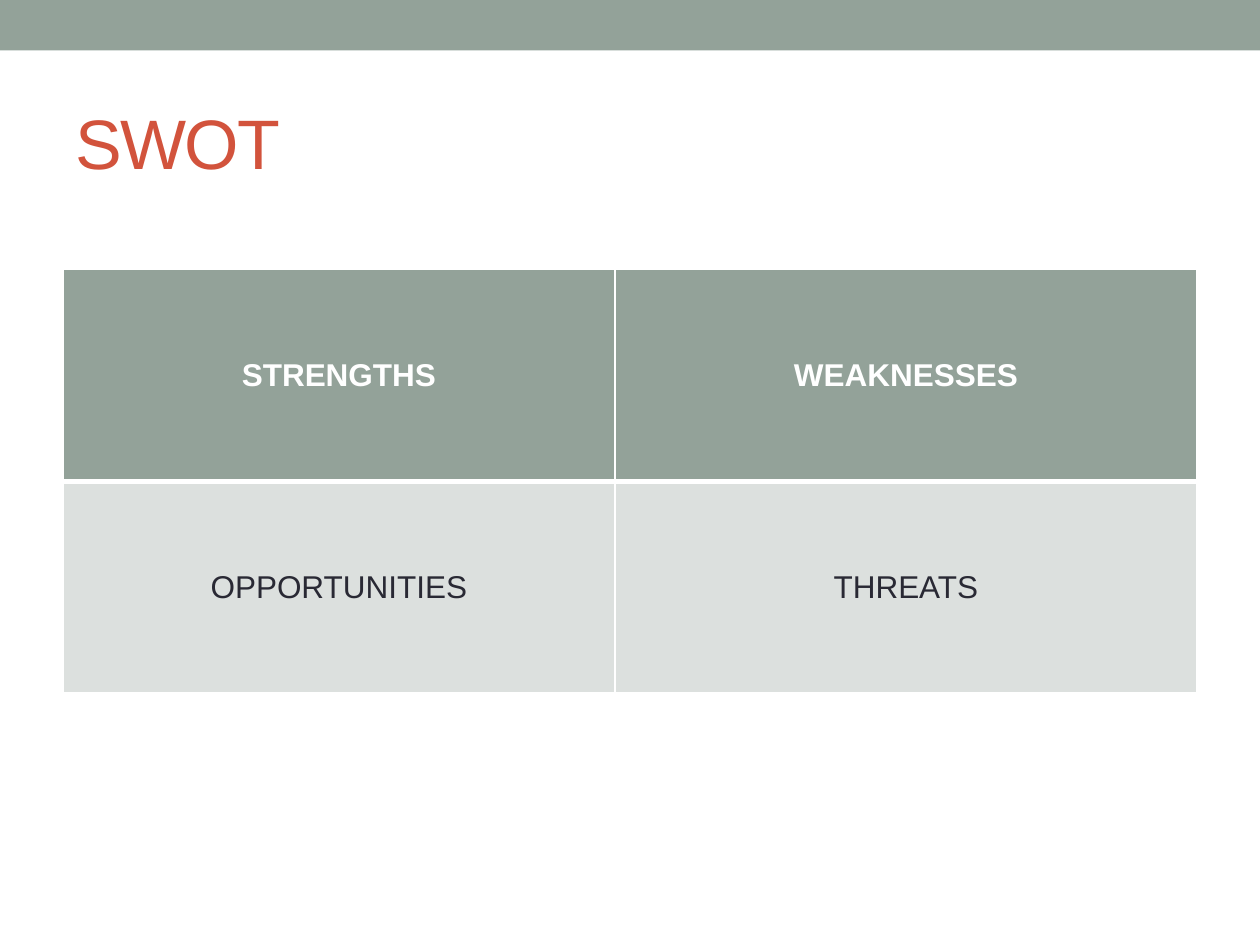
from lxml.etree import SubElement
from pptx import Presentation
from pptx.dml.color import RGBColor
from pptx.enum.shapes import MSO_SHAPE
from pptx.enum.text import MSO_ANCHOR, PP_ALIGN
from pptx.oxml.ns import qn
from pptx.util import Inches, Pt

COLORS = {"sage": "93A299", "pale": "DCE0DE", "rust": "D2533C", "ink": "292934", "white": "FFFFFF"}
TITLE = "SWOT"
QUADRANTS = [["STRENGTHS", "WEAKNESSES"], ["OPPORTUNITIES", "THREATS"]]
ROW_STYLES = [
    {"fill": "sage", "font": {"size": 18, "color": "white", "bold": True},
     "borders": {"lnL": 1, "lnR": 1, "lnT": 1, "lnB": 3}},
    {"fill": "pale", "font": {"size": 18, "color": "ink", "bold": False},
     "borders": {"lnL": 1, "lnR": 1, "lnT": 3, "lnB": 1}},
]
TITLE_FONT = {"size": 40, "color": "rust", "bold": False}
WIDTH, HEIGHT = 10, 7.5
MARGIN = WIDTH * 0.05
CONTENT_WIDTH = WIDTH - 2 * MARGIN
COLUMN_WIDTHS = [4.38, 4.62]
ROW_HEIGHT = 1.68
TABLE_TOP = 2.14


def color(name):
    return RGBColor.from_string(COLORS[name])


def paint(shape, name):
    shape.fill.solid()
    shape.fill.fore_color.rgb = color(name)


def write(frame, text, font, alignment):
    para = frame.paragraphs[0]
    para.alignment = alignment
    span = para.add_run()
    span.text = text
    values = {"name": "Arial", "size": Pt(font["size"]), "bold": font["bold"]}
    for key, value in values.items():
        setattr(span.font, key, value)
    span.font.color.rgb = color(font["color"])
    return span


def add_borders(cell, borders):
    properties = cell._tc.get_or_add_tcPr()
    for side, points in borders.items():
        line = SubElement(properties, qn(f"a:{side}"), w=str(Pt(points)))
        fill = SubElement(line, qn("a:solidFill"))
        SubElement(fill, qn("a:srgbClr"), val=COLORS["white"])


def add_band(page):
    band = page.shapes.add_shape(MSO_SHAPE.RECTANGLE, 0, 0, Inches(WIDTH), Inches(0.4))
    band.shadow.inherit = False
    paint(band, "sage")
    band.line.fill.background()


def add_title(page):
    title = page.shapes.title
    place = {"left": MARGIN, "top": 0.58, "width": CONTENT_WIDTH, "height": 1.08}
    for key, value in place.items():
        setattr(title, key, Inches(value))
    title.text_frame.word_wrap = True
    title.text_frame.vertical_anchor = MSO_ANCHOR.MIDDLE
    span = write(title.text_frame, TITLE, TITLE_FONT, PP_ALIGN.LEFT)
    span.font._element.set("spc", "-100")


def add_quadrants(page):
    place = [MARGIN, TABLE_TOP, CONTENT_WIDTH, ROW_HEIGHT * len(QUADRANTS)]
    table = page.shapes.add_table(
        len(QUADRANTS), len(COLUMN_WIDTHS), *[Inches(value) for value in place]).table
    table.horz_banding = False
    for column, width in zip(table.columns, COLUMN_WIDTHS):
        column.width = Inches(width)
    for row, labels, style in zip(table.rows, QUADRANTS, ROW_STYLES):
        row.height = Inches(ROW_HEIGHT)
        for cell, label in zip(row.cells, labels):
            add_borders(cell, style["borders"])
            paint(cell, style["fill"])
            cell.vertical_anchor = MSO_ANCHOR.MIDDLE
            write(cell.text_frame, label, style["font"], PP_ALIGN.CENTER)


def main():
    deck = Presentation()
    deck.slide_width, deck.slide_height = Inches(WIDTH), Inches(HEIGHT)
    page = deck.slides.add_slide(deck.slide_layouts[5])
    add_band(page)
    add_title(page)
    add_quadrants(page)
    deck.save("out.pptx")


if __name__ == "__main__":
    main()
